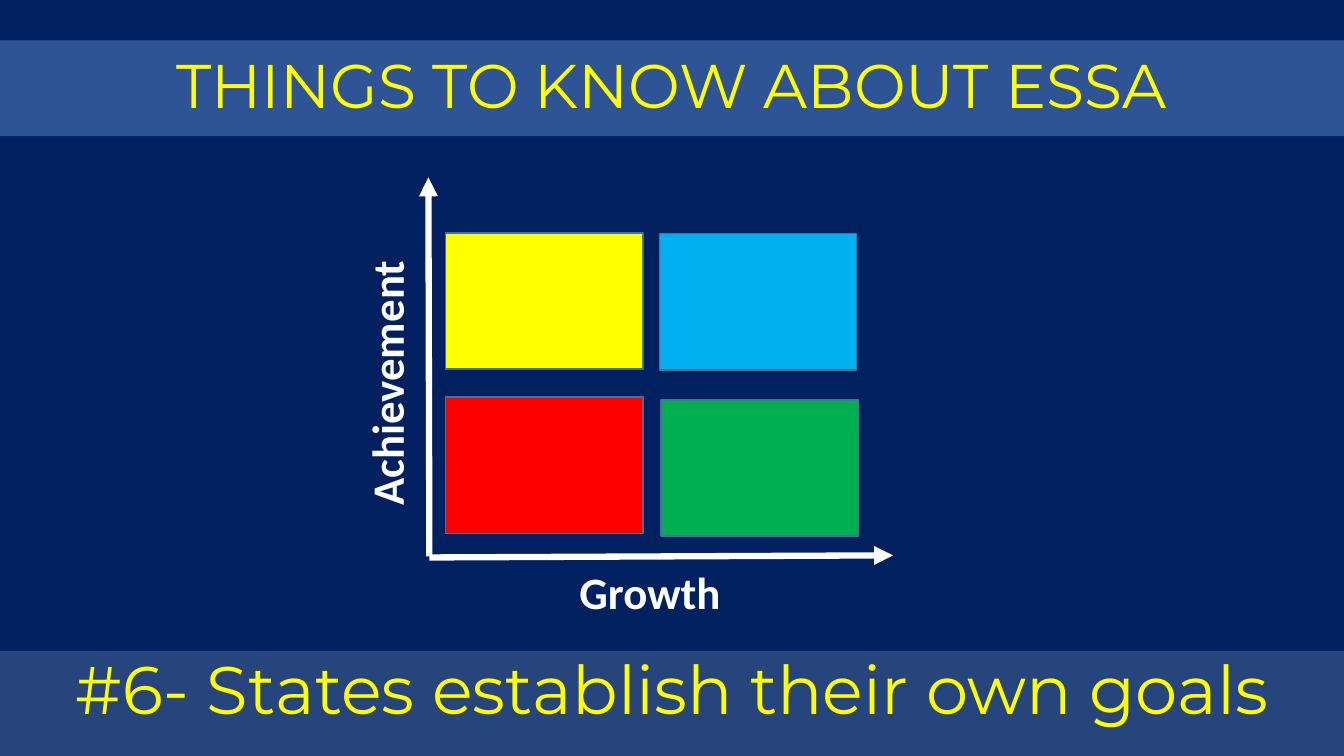
"""Build the ESSA slide with a growth and achievement grid."""
from lxml.etree import SubElement
from pptx import Presentation
from pptx.dml.color import RGBColor
from pptx.enum.shapes import MSO_CONNECTOR, MSO_SHAPE
from pptx.enum.text import MSO_ANCHOR, PP_ALIGN
from pptx.oxml.ns import qn
from pptx.util import Pt

HUES = {
    "navy": "002060", "band": "2F5496", "foot": "26457C", "edge": "42719B",
    "white": "FFFFFF", "yellow": "FFFF00", "red": "FF0000",
    "blue": "00B0F0", "green": "00B050",
}


def hue(name):
    return RGBColor.from_string(HUES[name])


def write(box, text, font, size, tone, bold=False):
    line = box.text_frame.paragraphs[0]
    run = line.add_run()
    run.text = text
    run.font.name = font
    run.font.size = Pt(size)
    run.font.bold = bold
    run.font.color.rgb = hue(tone)
    return line


deck = Presentation()
deck.slide_width, deck.slide_height = Pt(960), Pt(540)
slide = deck.slides.add_slide(deck.slide_layouts[6])
slide.background.fill.solid()
slide.background.fill.fore_color.rgb = hue("navy")

bands = [
    ("THINGS TO KNOW ABOUT ESSA", 28.8, 68.4, "band", 44, MSO_ANCHOR.MIDDLE),
    ("#6- States establish their own goals", 465.1, 74.9, "foot", 48, MSO_ANCHOR.TOP),
]
for text, top, high, tone, size, anchor in bands:
    band = slide.shapes.add_textbox(0, Pt(top), Pt(960), Pt(high))
    band.fill.solid()
    band.fill.fore_color.rgb = hue(tone)
    band.text_frame.word_wrap = True
    band.text_frame.vertical_anchor = anchor
    line = write(band, text, "Montserrat", size, "yellow")
    line.alignment = PP_ALIGN.CENTER
    line.line_spacing = 0.9

for ends in [(306.7, 397.4, 306, 126.7), (306.7, 398.2, 637.9, 396.7)]:
    axis = slide.shapes.add_connector(MSO_CONNECTOR.STRAIGHT, *map(Pt, ends))
    axis.line.color.rgb = hue("white")
    axis.line.width = Pt(4.5)
    SubElement(axis.line._get_or_add_ln(), qn("a:tailEnd"), type="triangle")
    SubElement(axis._element.spPr, qn("a:effectLst"))

tiles = [
    ("red", 318.2, 283.7), ("blue", 470.9, 167),
    ("green", 472.3, 285.8), ("yellow", 318.2, 166.3),
]
for tone, left, top in tiles:
    tile = slide.shapes.add_shape(
        MSO_SHAPE.RECTANGLE, Pt(left), Pt(top), Pt(141.1), Pt(97.2))
    tile.shadow.inherit = False
    tile.fill.solid()
    tile.fill.fore_color.rgb = hue(tone)
    tile.line.color.rgb = hue("edge")
    tile.line.width = Pt(1)

labels = [
    ("Growth", 406.8, 399.6, 128.9, 0),
    ("Achievement", 177.8, 247, 196.6, 270),
]
for text, left, top, wide, turn in labels:
    label = slide.shapes.add_textbox(Pt(left), Pt(top), Pt(wide), Pt(46.1))
    label.rotation = turn
    label.text_frame.word_wrap = True
    write(label, text, "Calibri", 32, "white", True)

deck.save("out.pptx")
